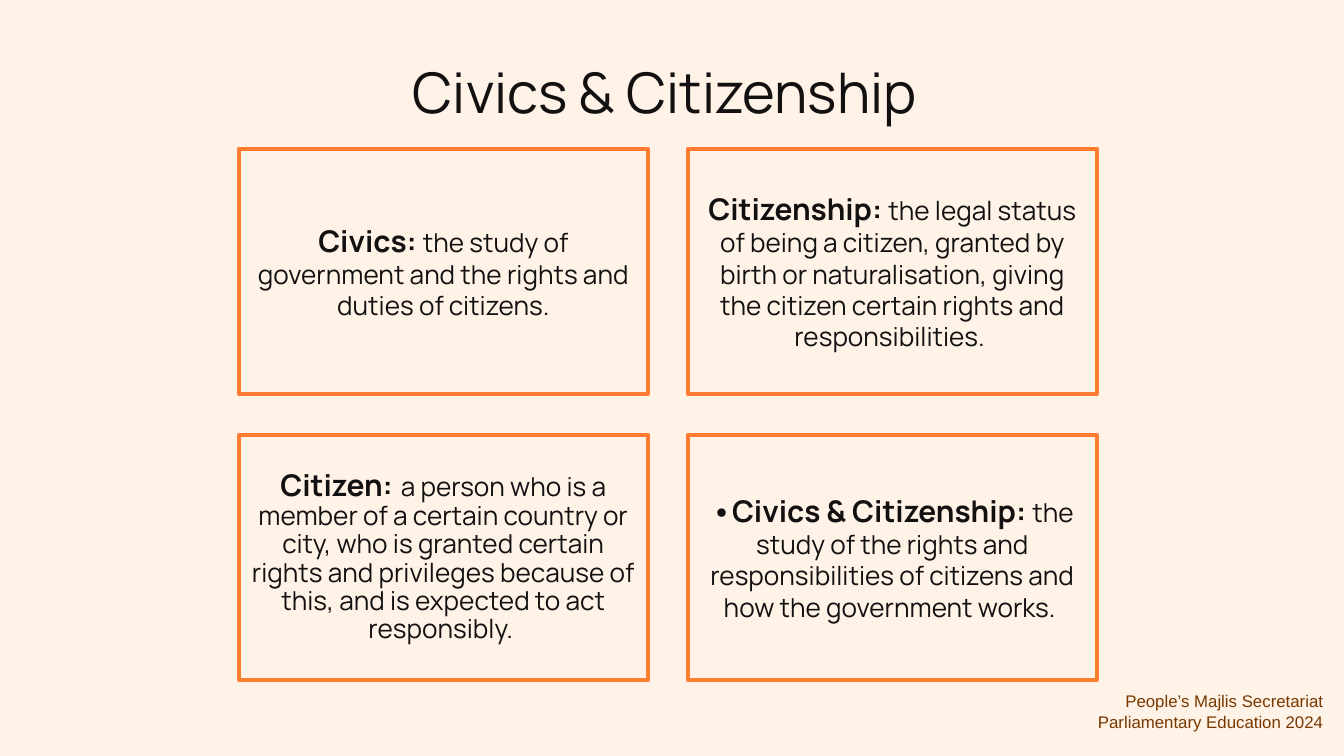
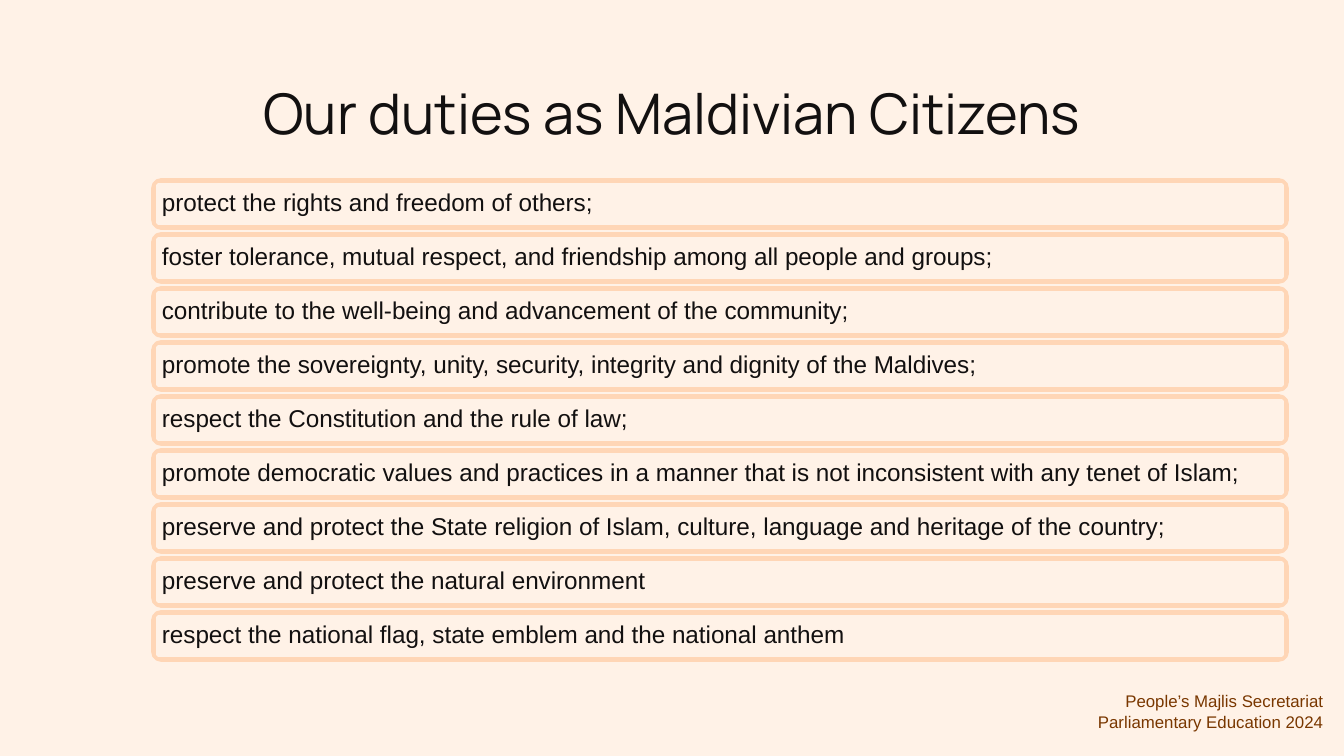
"""Builds two slides on civics, citizenship and the duties of citizens."""
from pptx import Presentation
from pptx.dml.color import RGBColor
from pptx.enum.shapes import MSO_SHAPE
from pptx.enum.text import MSO_ANCHOR, MSO_AUTO_SIZE, PP_ALIGN
from pptx.util import Emu, Pt

CREAM, ORANGE, PEACH, INK, BROWN = "FFF2E7", "FF7C30", "FFD6B6", "121010", "793700"
HEAD, BODY = "Manrope", "Arial"
FOOTER = ["People’s Majlis Secretariat", "Parliamentary Education 2024"]

CARDS_TITLE = "Civics & Citizenship"
CARDS = [
    (1.0, [("Civics: ", 16, HEAD, True),
           ("the study of government and the rights and duties of citizens.", 14, HEAD, False)]),
    (1.0, [("Citizenship: ", 16, HEAD, True),
           ("the legal status of being a citizen, granted by birth or naturalisation, "
            "giving the citizen certain rights and responsibilities. ", 14, HEAD, False)]),
    (0.9, [("Citizen:", 16, HEAD, True),
           (" ", 15, BODY, False),
           ("a person who is a member of a certain country or city, who is granted certain rights "
            "and privileges because of this, and is expected to act responsibly. ", 14, HEAD, False)]),
    (1.0, [("•Civics & Citizenship: ", 16, HEAD, True),
           ("the study of the rights and responsibilities of citizens and how the "
            "government works. ", 14, HEAD, False)]),
]

DUTIES_TITLE = "Our duties as Maldivian Citizens"
DUTIES = [
    "protect the rights and freedom of others;",
    "foster tolerance, mutual respect, and friendship among all people and groups;",
    "contribute to the well-being and advancement of the community;",
    "promote the sovereignty, unity, security, integrity and dignity of the Maldives;",
    "respect the Constitution and the rule of law;",
    "promote democratic values and practices in a manner that is not inconsistent with any tenet of Islam;",
    "preserve and protect the State religion of Islam, culture, language and heritage of the country;",
    "preserve and protect the natural environment",
    "respect the national flag, state emblem and the national anthem",
]


def px(n):
    return Emu(round(n * 914400 / 134.4))


def rgb(color):
    return RGBColor.from_string(color)


def style(font, size, name, color, bold=False):
    font.size, font.name, font.bold = Pt(size), name, bold
    font.color.rgb = rgb(color)


def frame(sp, margin_x, margin_y, anchor):
    tf = sp.text_frame
    tf.word_wrap = True
    tf.auto_size = MSO_AUTO_SIZE.NONE
    tf.vertical_anchor = anchor
    tf.margin_left = tf.margin_right = px(margin_x)
    tf.margin_top = tf.margin_bottom = px(margin_y)
    return tf


def add_box(s, kind, box, line, width, fill=None):
    sp = s.shapes.add_shape(kind, *map(px, box))
    sp.shadow.inherit = False
    if fill:
        sp.fill.solid()
        sp.fill.fore_color.rgb = rgb(fill)
    else:
        sp.fill.background()
    sp.line.color.rgb = rgb(line)
    sp.line.width = Pt(width)
    return sp


def add_slide(prs, title, left, top):
    s = prs.slides.add_slide(prs.slide_layouts[5])
    tb = s.shapes.add_textbox(px(930), px(684), px(406), px(54))
    tf = frame(tb, 13, 7, MSO_ANCHOR.TOP)
    tf.text = "\n".join(FOOTER)
    for p in tf.paragraphs:
        p.alignment = PP_ALIGN.RIGHT
        style(p.font, 9, BODY, BROWN)
    sp = s.shapes.title
    sp.left, sp.top, sp.width, sp.height = map(px, (left, top, 1134, 85))
    tf = frame(sp, 13, 13, MSO_ANCHOR.TOP)
    tf.text = title
    p = tf.paragraphs[0]
    p.alignment = PP_ALIGN.CENTER
    style(p.font, 30, HEAD, INK)
    return s


def add_cards(s):
    for i, (spacing, runs) in enumerate(CARDS):
        row, col = divmod(i, 2)
        box = 239 + col * 449, 149 + row * 286, 409, 245
        sp = add_box(s, MSO_SHAPE.RECTANGLE, box, ORANGE, 2, CREAM)
        p = frame(sp, 9, 9, MSO_ANCHOR.MIDDLE).paragraphs[0]
        p.alignment = PP_ALIGN.CENTER
        p.line_spacing = spacing
        for text, size, name, bold in runs:
            r = p.add_run()
            r.text = text
            style(r.font, size, name, INK, bold)


def add_duties(s):
    for i, duty in enumerate(DUTIES):
        top = 180 + i * 54
        sp = add_box(s, MSO_SHAPE.ROUNDED_RECTANGLE, (153, top, 1134, 48), PEACH, 2, CREAM)
        sp.adjustments[0] = 0.17
        sp = add_box(s, MSO_SHAPE.RECTANGLE, (155, top + 2, 1130, 44), PEACH, 0.75)
        tf = frame(sp, 7, 7, MSO_ANCHOR.MIDDLE)
        tf.text = duty
        p = tf.paragraphs[0]
        p.alignment = PP_ALIGN.LEFT
        p.line_spacing = 0.9
        style(p.font, 13, BODY, INK)


def main():
    prs = Presentation()
    prs.slide_width, prs.slide_height = px(1344), px(756)
    fill = prs.slide_master.background.fill
    fill.solid()
    fill.fore_color.rgb = rgb(CREAM)
    add_cards(add_slide(prs, CARDS_TITLE, 98, 44))
    add_duties(add_slide(prs, DUTIES_TITLE, 105, 66))
    prs.save("out.pptx")


if __name__ == "__main__":
    main()
